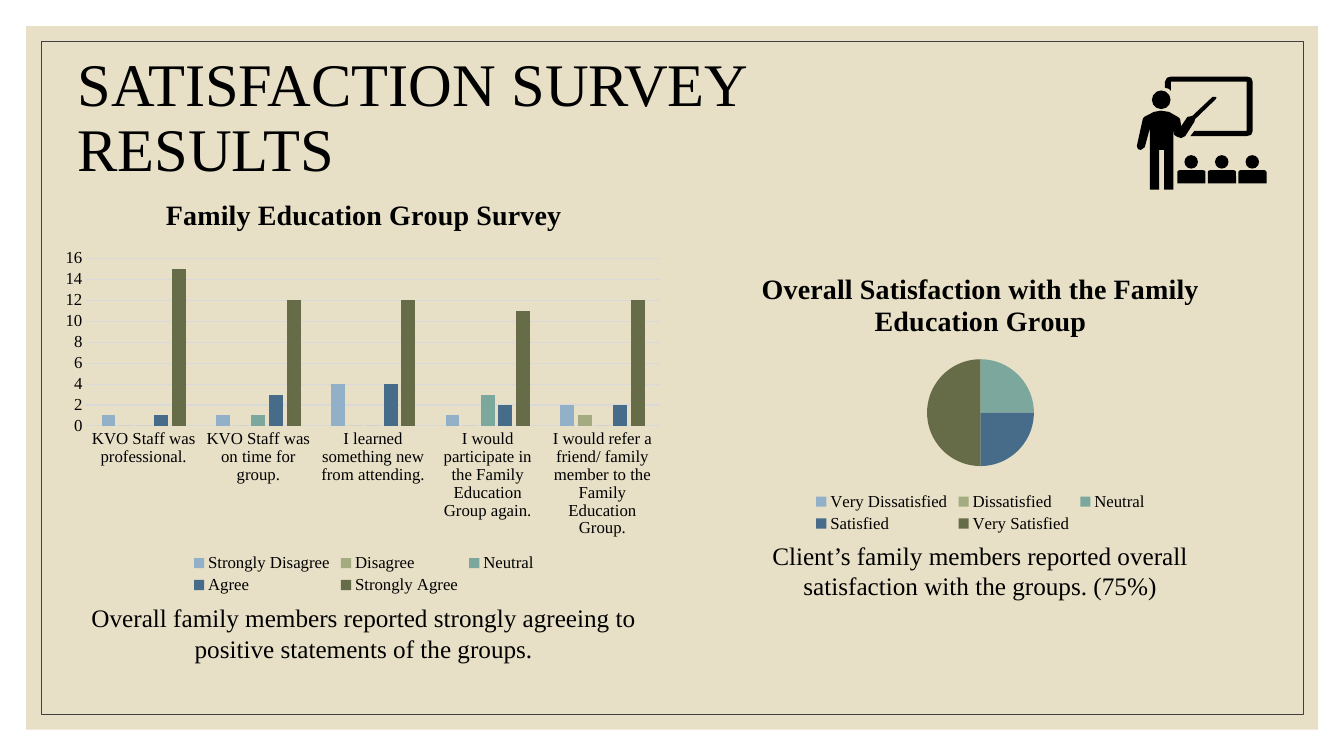
from dataclasses import dataclass

from lxml import etree
from pptx import Presentation
from pptx.chart.data import CategoryChartData
from pptx.dml.color import RGBColor
from pptx.enum.chart import XL_CHART_TYPE, XL_LEGEND_POSITION, XL_TICK_MARK
from pptx.enum.shapes import MSO_SHAPE
from pptx.enum.text import MSO_ANCHOR, MSO_AUTO_SIZE, PP_ALIGN
from pptx.oxml.ns import qn
from pptx.util import Cm, Pt

COLUMN, PIE = XL_CHART_TYPE.COLUMN_CLUSTERED, XL_CHART_TYPE.PIE
BOTTOM, NO_TICK = XL_LEGEND_POSITION.BOTTOM, XL_TICK_MARK.NONE
RECT, OVAL, BUST = MSO_SHAPE.RECTANGLE, MSO_SHAPE.OVAL, MSO_SHAPE.ROUND_2_SAME_RECTANGLE
MIDDLE, NO_FIT = MSO_ANCHOR.MIDDLE, MSO_AUTO_SIZE.NONE
LEFT, CENTER = PP_ALIGN.LEFT, PP_ALIGN.CENTER


@dataclass(frozen=True)
class Theme:
    face: str = "Times New Roman"
    ink: str = "000000"
    panel: str = "E7E0C7"
    frame: str = "404040"
    grid: str = "D9D9D9"
    scale: tuple = ("92B0C8", "A5AB81", "7BA79D", "466C8A", "676C48")
    title: float = 43.2
    head: float = 20
    body: float = 18
    label: float = 12


TOPICS = ["KVO Staff was professional.", "KVO Staff was on time for group.",
          "I learned something new from attending.",
          "I would participate in the Family Education Group again.",
          "I would refer a friend/ family member to the Family Education Group."]
AGREE = {
    "Strongly Disagree": (1, 1, 4, 1, 2),
    "Disagree": (0, 0, 0, 0, 1),
    "Neutral": (0, 1, 0, 3, 0),
    "Agree": (1, 3, 4, 2, 2),
    "Strongly Agree": (15, 12, 12, 11, 12),
}
GRADES = ["Very Dissatisfied", "Dissatisfied", "Neutral", "Satisfied", "Very Satisfied"]
OVERALL = "Overall Satisfaction with the Family Education Group"

BOARD = [(31.42, 1.93), (29.51, 1.93), (29.41, 1.96), (29.36, 2.06), (29.36, 2.21),
         (29.46, 2.24), (29.51, 2.29), (29.51, 2.06), (31.42, 2.06), (31.42, 3.3),
         (30.1, 3.3), (30, 3.43), (31.42, 3.43), (31.53, 3.4), (31.57, 3.3),
         (31.57, 2.06), (31.53, 1.96)]
SPEAKER = [(30.63, 2.44), (30.56, 2.44), (30.05, 2.92), (29.92, 2.95), (29.77, 3.18),
           (29.74, 3), (29.69, 2.95), (29.46, 2.82), (29.26, 2.79), (29.08, 2.82),
           (28.83, 2.95), (28.8, 3), (28.65, 3.68), (28.68, 3.76), (28.75, 3.78),
           (28.85, 3.71), (28.98, 3.23), (28.98, 4.78), (29.21, 4.78), (29.21, 3.78),
           (29.34, 3.78), (29.34, 4.78), (29.57, 4.78), (29.57, 3.23), (29.59, 3.4),
           (29.67, 3.45), (29.77, 3.48), (29.87, 3.43), (30.1, 3.07), (30.12, 3),
           (30.63, 2.51), (30.66, 2.46)]


class Page:
    def __init__(self, slide, theme):
        self.slide, self.theme = slide, theme
        self.shapes = slide.shapes

    def font(self, font, size, bold=False):
        font.name, font.size, font.bold = self.theme.face, Pt(size), bold
        font.color.rgb = RGBColor.from_string(self.theme.ink)

    def paint(self, part, color):
        part.fill.solid()
        part.fill.fore_color.rgb = RGBColor.from_string(color)

    def stroke(self, line, color, width):
        line.color.rgb = RGBColor.from_string(color)
        line.width = Pt(width)

    def finish(self, shape, fill, line):
        shape.shadow.inherit = False
        if fill:
            self.paint(shape, fill)
        else:
            shape.fill.background()
        if line:
            self.stroke(shape.line, line, 0.5)
        else:
            shape.line.fill.background()

    def shape(self, kind, box, fill=None, line=None):
        self.finish(self.shapes.add_shape(kind, *map(Cm, box)), fill, line)

    def outline(self, points, fill):
        start, *rest = [(Cm(x), Cm(y)) for x, y in points]
        pen = self.shapes.build_freeform(*start)
        pen.add_line_segments(rest)
        self.finish(pen.convert_to_shape(), fill, None)

    def title(self, text, box):
        """Place the title placeholder in front of what is drawn so far."""
        title = self.shapes.title
        title.element.getparent().append(title.element)
        title.left, title.top, title.width, title.height = map(Cm, box)
        frame = title.text_frame
        frame.text, frame.word_wrap = text, True
        frame.vertical_anchor, frame.auto_size = MIDDLE, NO_FIT
        para = frame.paragraphs[0]
        para.alignment, para.line_spacing = LEFT, 0.9
        self.font(para.font, self.theme.title)

    def text(self, text, box):
        frame = self.shapes.add_textbox(*map(Cm, box)).text_frame
        frame.text, frame.word_wrap = text, True
        para = frame.paragraphs[0]
        para.alignment = CENTER
        self.font(para.font, self.theme.body)

    def chart(self, kind, title, cats, series, box, plot):
        """Add a chart; plot gives the inner plot area as shares of the chart."""
        data = CategoryChartData()
        data.categories = cats
        for name, values in series.items():
            data.add_series(name, values)
        chart = self.shapes.add_chart(kind, *map(Cm, box), data).chart
        self.font(chart.font, self.theme.label)
        chart.has_title = True
        chart.chart_title.text_frame.text = title
        self.font(chart.chart_title.text_frame.paragraphs[0].font, self.theme.head, True)
        chart.has_legend = True
        chart.legend.position, chart.legend.include_in_layout = BOTTOM, False
        self.font(chart.legend.font, self.theme.label)
        self.fix_plot(chart, plot)
        return chart

    def fix_plot(self, chart, plot):
        area = chart.element.find(".//" + qn("c:plotArea"))
        for old in area.findall(qn("c:layout")):
            area.remove(old)
        layout = etree.Element(qn("c:layout"))
        manual = etree.SubElement(layout, qn("c:manualLayout"))
        items = [("layoutTarget", "inner"), ("xMode", "edge"), ("yMode", "edge")]
        for tag, value in items + list(zip("xywh", plot)):
            etree.SubElement(manual, qn("c:" + tag)).set("val", str(value))
        area.insert(0, layout)

    def columns(self, title, cats, series, box, plot):
        chart = self.chart(COLUMN, title, cats, series, box, plot)
        bars = chart.plots[0]
        bars.vary_by_categories, bars.gap_width, bars.overlap = False, 219, -27
        for item, color in zip(bars.series, self.theme.scale):
            self.paint(item.format, color)
        for axis in (chart.category_axis, chart.value_axis):
            axis.major_tick_mark = axis.minor_tick_mark = NO_TICK
            self.font(axis.tick_labels.font, self.theme.label)
        self.stroke(chart.category_axis.format.line, self.theme.grid, 0.75)
        values = chart.value_axis
        values.minimum_scale, values.maximum_scale, values.major_unit = 0, 16, 2
        values.format.line.fill.background()
        self.stroke(values.major_gridlines.format.line, self.theme.grid, 0.75)

    def pie(self, title, cats, values, box, plot):
        chart = self.chart(PIE, title, cats, {title: values}, box, plot)
        chart.plots[0].vary_by_categories = True
        for i, color in enumerate(self.theme.scale):
            part = chart.plots[0].series[0].points[i].format
            self.paint(part, color)
            part.line.fill.background()

    def lesson(self):
        """Draw the icon of a speaker at a board before three listeners."""
        ink = self.theme.ink
        for i in range(3):
            shift = 0.77 * i
            self.shape(OVAL, (29.85 + shift, 3.91, 0.34, 0.34), ink)
            self.shape(BUST, (29.67 + shift, 4.29, 0.71, 0.33), ink)
        self.shape(OVAL, (29.03, 2.28, 0.47, 0.47), ink)
        self.outline(SPEAKER, ink)
        self.outline(BOARD, ink)


def main():
    deck = Presentation()
    deck.slide_width, deck.slide_height = Cm(33.87), Cm(19.05)
    theme = Theme()
    page = Page(deck.slides.add_slide(deck.slide_layouts[5]), theme)
    page.shape(RECT, (0.66, 0.66, 32.56, 17.73), fill=theme.panel)
    page.shape(RECT, (1.04, 1.04, 31.8, 16.97), line=theme.frame)
    page.title("SATISFACTION SURVEY RESULTS", (1.7, 1.22, 23.93, 3.58))
    page.pie(OVERALL, GRADES, (0, 0, 25, 25, 50),
             (16.94, 6.43, 15.54, 7.09), (0.41, 0.37, 0.18, 0.38))
    page.text("Client’s family members reported overall satisfaction with the groups. (75%)",
              (17.93, 13.49, 13.54, 1.8))
    page.columns("Family Education Group Survey", TOPICS, AGREE,
                 (1.4, 4.5, 15.54, 10.57), (0.05, 0.19, 0.93, 0.4))
    page.text("Overall family members reported strongly agreeing to positive statements "
              "of the groups.", (1.9, 15.06, 14.53, 1.8))
    page.lesson()
    deck.save("out.pptx")


if __name__ == "__main__":
    main()
